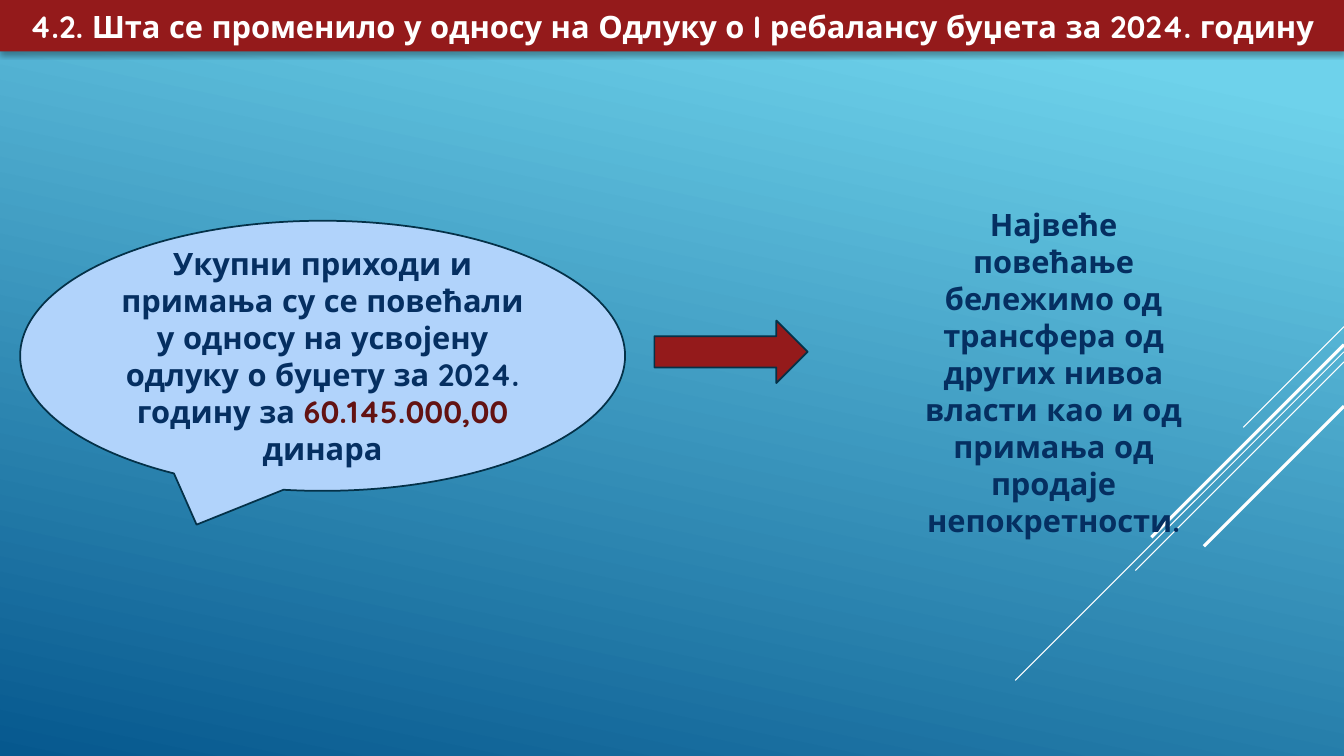
"""Build the slide on what changed against the first budget rebalance of 2024."""
from dataclasses import dataclass

from lxml import etree
from pptx import Presentation
from pptx.dml.color import RGBColor
from pptx.enum.shapes import MSO_CONNECTOR, MSO_SHAPE
from pptx.enum.text import MSO_ANCHOR, MSO_AUTO_SIZE, PP_ALIGN
from pptx.oxml.ns import qn
from pptx.util import Inches, Pt

STRAIGHT = MSO_CONNECTOR.STRAIGHT
CALLOUT = MSO_SHAPE.OVAL_CALLOUT
ARROW = MSO_SHAPE.RIGHT_ARROW
TEARDROP = MSO_SHAPE.TEAR
MIDDLE = MSO_ANCHOR.MIDDLE
CENTER = PP_ALIGN.CENTER
NO_AUTOFIT = MSO_AUTO_SIZE.NONE
TITLE_ONLY = 5
WIDTH, HEIGHT = 13.33, 7.5


@dataclass(frozen=True)
class Theme:
    font: str = "Quicksand"
    size: float = 22
    outline_width: float = 1.25
    thin: float = 0.75
    thick: float = 2.25
    sky: str = "6ED2EB"
    deep: str = "06588E"
    red: str = "941A1B"
    amount: str = "631212"
    pale: str = "B1D3FB"
    outline: str = "043148"
    navy: str = "052F61"
    white: str = "FFFFFF"
    shadow: str = "000000"


def rgb(value):
    return RGBColor.from_string(value)


def add_run(p, text, *, font, size, color, bold=True):
    r = p.add_run()
    r.text = text
    r.font.name = font
    r.font.size = Pt(size)
    r.font.bold = bold
    r.font.color.rgb = rgb(color)


class SlideBuilder:
    def __init__(self, prs, theme):
        self.theme = theme
        self.s = prs.slides.add_slide(prs.slide_layouts[TITLE_ONLY])

    def background(self, angle):
        fill = self.s.background.fill
        fill.gradient()
        fill.gradient_angle = angle
        stops = ((0.1, self.theme.sky), (1, self.theme.deep))
        for stop, (position, color) in zip(fill.gradient_stops, stops):
            stop.position = position
            stop.color.rgb = rgb(color)

    def set_text(self, sp, parts):
        tf = sp.text_frame
        tf.word_wrap = True
        tf.auto_size = NO_AUTOFIT
        tf.vertical_anchor = MIDDLE
        p = tf.paragraphs[0]
        p.alignment = CENTER
        for text, color in parts:
            add_run(p, text, font=self.theme.font, size=self.theme.size, color=color)

    def title(self, text, height):
        sp = self.s.shapes.title
        sp.left, sp.top = Inches(0), Inches(0)
        sp.width, sp.height = Inches(WIDTH), Inches(height)
        spPr = sp._element.spPr
        geom = etree.SubElement(spPr, qn("a:prstGeom"), prst="roundRect")
        etree.SubElement(geom, qn("a:avLst"))
        sp.fill.solid()
        sp.fill.fore_color.rgb = rgb(self.theme.red)
        sp.shadow.inherit = False
        shadow = etree.SubElement(
            spPr.find(qn("a:effectLst")), qn("a:outerShdw"),
            blurRad=str(Pt(3.5)), dist=str(Pt(2.2)), dir="5400000", rotWithShape="0")
        color = etree.SubElement(shadow, qn("a:srgbClr"), val=self.theme.shadow)
        etree.SubElement(color, qn("a:alpha"), val="32000")
        self.set_text(sp, [(text, self.theme.white)])

    def line(self, x1, y1, x2, y2, width):
        c = self.s.shapes.add_connector(
            STRAIGHT, Inches(x1), Inches(y1), Inches(x2), Inches(y2))
        c.line.color.rgb = rgb(self.theme.white)
        c.line.width = Pt(width)
        etree.SubElement(c._element.spPr, qn("a:effectLst"))

    def shape(self, kind, x, y, w, h, fill=None, parts=()):
        sp = self.s.shapes.add_shape(kind, Inches(x), Inches(y), Inches(w), Inches(h))
        sp.shadow.inherit = False
        if fill:
            sp.fill.solid()
            sp.fill.fore_color.rgb = rgb(fill)
            sp.line.color.rgb = rgb(self.theme.outline)
            sp.line.width = Pt(self.theme.outline_width)
        else:
            sp.fill.background()
            sp.line.fill.background()
        self.set_text(sp, parts)


def main():
    prs = Presentation()
    prs.slide_width, prs.slide_height = Inches(WIDTH), Inches(HEIGHT)
    theme = Theme()
    b = SlideBuilder(prs, theme)
    b.background(angle=258)

    diagonals = (
        (3.24, 1, theme.thin),
        (3.49, 3.26, theme.thin),
        (3.59, 2.07, theme.thin),
        (3.42, 1.91, theme.thick),
        (4.03, 1.39, theme.thick),
    )
    for y, run, width in diagonals:
        b.line(WIDTH, y, WIDTH - run, y + run, width)

    b.title("4.2. Шта се променило у односу на Одлуку о I ребалансу буџета за 2024. годину",
            height=0.51)
    b.shape(CALLOUT, 0.2, 2.19, 6, 2.68, theme.pale, [
        ("Укупни приходи и примања су се повећали у односу на усвојену "
         "одлуку о буџету за 2024. годину за ", theme.navy),
        ("60.145.000,00 ", theme.amount),
        ("динара", theme.navy),
    ])
    b.shape(ARROW, 6.49, 3.18, 1.52, 0.62, theme.red)
    b.shape(TEARDROP, 8.31, 2.09, 4.28, 3.21, parts=[
        ("Највеће повећање бележимо од трансфера од других нивоа власти "
         "као и од примања од продаје непокретности.", theme.navy),
    ])
    prs.save("out.pptx")


if __name__ == "__main__":
    main()
